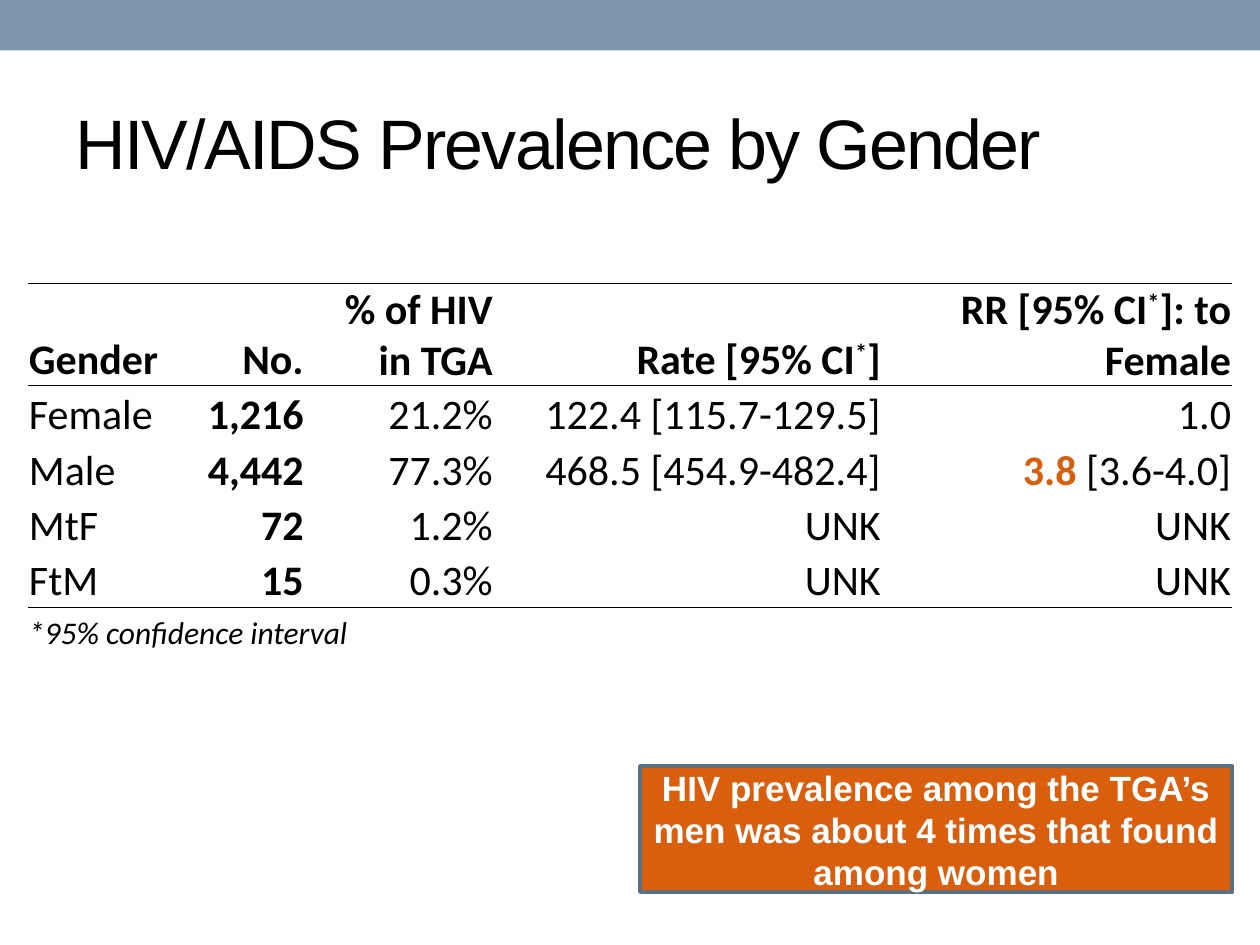
from dataclasses import dataclass

from lxml.etree import SubElement
from pptx import Presentation
from pptx.dml.color import RGBColor
from pptx.enum.shapes import MSO_SHAPE
from pptx.enum.text import MSO_ANCHOR, PP_ALIGN
from pptx.oxml.ns import qn
from pptx.util import Inches, Pt


@dataclass(frozen=True)
class Theme:
    """Colours, fonts and type sizes of the slide."""
    ink: str = "000000"
    paper: str = "FFFFFF"
    band: str = "7E97AD"
    accent: str = "D95F0E"
    outline: str = "5D7080"
    heading_font: str = "Arial"
    table_font: str = "Calibri"
    title_size: int = 40
    callout_size: int = 20
    table_size: int = 24
    note_size: int = 18
    rule_width: float = 0.5
    outline_width: float = 2.08


THEME = Theme()
COLUMN_WIDTHS = (1.2, 1, 1.5, 3.08, 2.78)
ROW_HEIGHTS = (0.58, 0.44, 0.44, 0.44, 0.44, 0.36)
RULED_EDGES = (0, 1, 5)
STAR = ("*", {"baseline": "30000"})
HEADERS = (
    ["Gender"],
    ["No."],
    ["% of HIV in TGA"],
    ["Rate [95% CI", STAR, "]"],
    ["RR [95% CI", STAR, "]: to Female"],
)
RECORDS = (
    (["Female"], ["1,216"], ["21.2%"], ["122.4 [115.7-129.5]"], ["1.0"]),
    (["Male"], ["4,442"], ["77.3%"], ["468.5 [454.9-482.4]"],
     [("3.8", {"bold": True, "color": THEME.accent}), " [3.6-4.0]"]),
    (["MtF"], ["72"], ["1.2%"], ["UNK"], ["UNK"]),
    (["FtM"], ["15"], ["0.3%"], ["UNK"], ["UNK"]),
)
NOTE = "*95% confidence interval"


def set_attributes(target, values):
    """Set every named value on the target."""
    for name, value in values.items():
        setattr(target, name, value)


def add_run(paragraph, text, size, font, color=THEME.ink, bold=False, italic=False, **properties):
    """Add formatted text, with further run properties as XML attributes."""
    run = paragraph.add_run()
    run.text = text
    set_attributes(run.font, {"size": Pt(size), "name": font, "bold": bold, "italic": italic})
    run.font.color.rgb = RGBColor.from_string(color)
    for name, value in properties.items():
        run.font._element.set(name, value)


def add_rectangle(slide, left, top, width, height, fill, outline=None):
    """Add a flat rectangle, outlined if a colour is given."""
    shape = slide.shapes.add_shape(
        MSO_SHAPE.RECTANGLE, Inches(left), Inches(top), Inches(width), Inches(height))
    shape.shadow.inherit = False
    shape.fill.solid()
    shape.fill.fore_color.rgb = RGBColor.from_string(fill)
    if outline:
        shape.line.color.rgb = RGBColor.from_string(outline)
        shape.line.width = Pt(THEME.outline_width)
    else:
        shape.line.fill.background()
    return shape


def add_title(slide, text):
    """Add the slide title."""
    shape = slide.shapes.add_textbox(Inches(0.5), Inches(0.58), Inches(9), Inches(1.08))
    set_attributes(shape.text_frame, {"word_wrap": True, "vertical_anchor": MSO_ANCHOR.MIDDLE})
    add_run(shape.text_frame.paragraphs[0], text, THEME.title_size, THEME.heading_font, spc="-100")


def add_callout(slide, text):
    """Add the highlighted finding."""
    shape = add_rectangle(slide, 5.08, 6.08, 4.7, 1, THEME.accent, THEME.outline)
    set_attributes(shape.text_frame, {"word_wrap": True, "vertical_anchor": MSO_ANCHOR.MIDDLE})
    paragraph = shape.text_frame.paragraphs[0]
    paragraph.alignment = PP_ALIGN.CENTER
    add_run(paragraph, text, THEME.callout_size, THEME.heading_font, THEME.paper, bold=True)


def set_borders(cell, row_index):
    """Rule the cell's top and bottom where the table has a line."""
    properties = cell._tc.get_or_add_tcPr()
    ruled = {"a:lnL": False, "a:lnR": False,
             "a:lnT": row_index in RULED_EDGES, "a:lnB": row_index + 1 in RULED_EDGES}
    for tag, visible in ruled.items():
        line = SubElement(properties, qn(tag), w=str(Pt(THEME.rule_width)))
        if visible:
            fill = SubElement(line, qn("a:solidFill"))
            SubElement(fill, qn("a:srgbClr"), val=THEME.ink)
        else:
            SubElement(line, qn("a:noFill"))


def fill_cell(cell, pieces, alignment, **base_format):
    """Write text pieces, each plain or paired with its own format."""
    paragraph = cell.text_frame.paragraphs[0]
    paragraph.alignment = alignment
    for piece in pieces:
        text, extra = (piece, {}) if isinstance(piece, str) else piece
        values = {"size": THEME.table_size, "font": THEME.table_font, **base_format, **extra}
        add_run(paragraph, text, **values)


def add_prevalence_table(slide):
    """Add the table of prevalence by gender with its footnote row."""
    table = slide.shapes.add_table(
        len(ROW_HEIGHTS), len(COLUMN_WIDTHS), Inches(0.22), Inches(2.25),
        Inches(sum(COLUMN_WIDTHS)), Inches(sum(ROW_HEIGHTS))).table
    set_attributes(table, {"first_row": False, "horz_banding": False})
    for column, width in zip(table.columns, COLUMN_WIDTHS):
        column.width = Inches(width)
    inset = Inches(0.01)
    for row_index, (row, height) in enumerate(zip(table.rows, ROW_HEIGHTS)):
        row.height = Inches(height)
        for cell in row.cells:
            set_attributes(cell, {
                "margin_left": inset, "margin_right": inset, "margin_top": inset,
                "margin_bottom": 0, "vertical_anchor": MSO_ANCHOR.BOTTOM})
            set_borders(cell, row_index)
            cell.fill.background()
    for row_index, record in enumerate((HEADERS, *RECORDS)):
        for column_index, pieces in enumerate(record):
            alignment = PP_ALIGN.RIGHT if column_index else PP_ALIGN.LEFT
            bold = row_index == 0 or column_index == 1
            fill_cell(table.cell(row_index, column_index), pieces, alignment, bold=bold)
    last_row = len(ROW_HEIGHTS) - 1
    note_cell = table.cell(last_row, 0)
    note_cell.merge(table.cell(last_row, len(COLUMN_WIDTHS) - 1))
    fill_cell(note_cell, [NOTE], PP_ALIGN.LEFT, size=THEME.note_size, italic=True)


def main():
    """Build and save the slide."""
    presentation = Presentation()
    set_attributes(presentation, {"slide_width": Inches(10), "slide_height": Inches(7.5)})
    slide = presentation.slides.add_slide(presentation.slide_layouts[6])
    add_rectangle(slide, 0, 0, 10, 0.4, THEME.band)
    add_title(slide, "HIV/AIDS Prevalence by Gender")
    add_callout(
        slide, "HIV prevalence among the TGA’s men was about 4 times that found among women")
    add_prevalence_table(slide)
    presentation.save("out.pptx")


if __name__ == "__main__":
    main()
